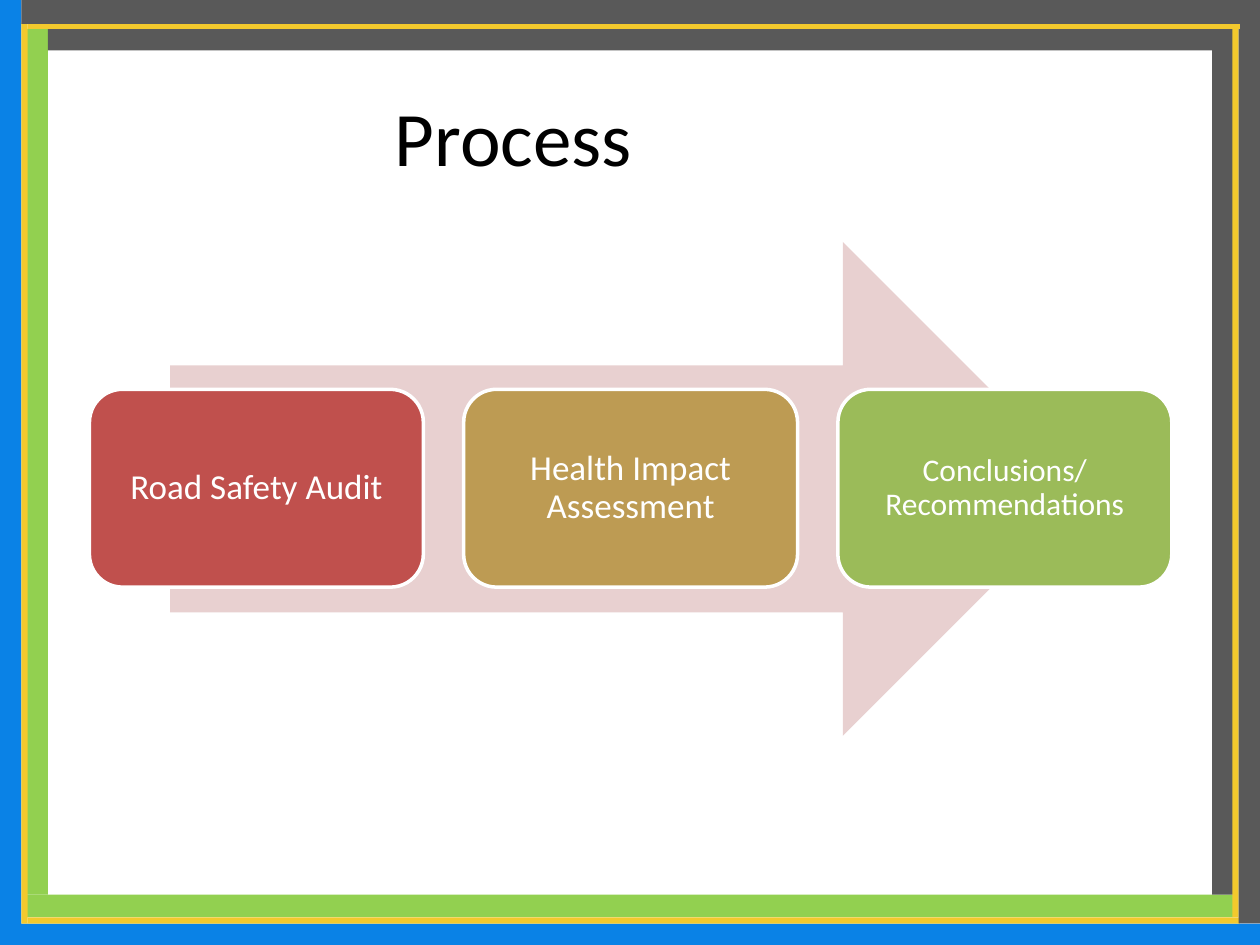
import pptx
import pptx.dml.color
import pptx.enum.shapes
import pptx.enum.text
import pptx.util

Inches = pptx.util.Inches
Pt = pptx.util.Pt
SHAPE = pptx.enum.shapes.MSO_SHAPE


def rgb(value):
    return pptx.dml.color.RGBColor.from_string(value)


class Deck:
    font = "Calibri"
    blue, green, yellow, grey = "0A82E6", "92D050", "F3C92D", "595959"
    white, black = "FFFFFF", "000000"

    def __init__(self, width, height):
        self.prs = pptx.Presentation()
        self.prs.slide_width = Inches(width)
        self.prs.slide_height = Inches(height)
        self.s = self.prs.slides.add_slide(self.prs.slide_layouts[5])

    def shape(self, kind, box, fill):
        sp = self.s.shapes.add_shape(kind, *map(Inches, box))
        sp.shadow.inherit = False
        sp.fill.solid()
        sp.fill.fore_color.rgb = rgb(fill)
        sp.line.fill.background()
        return sp

    def text(self, sp, text, size, color):
        tf = sp.text_frame
        tf.text = text
        tf.word_wrap = True
        tf.vertical_anchor = pptx.enum.text.MSO_ANCHOR.MIDDLE
        p = tf.paragraphs[0]
        p.alignment = pptx.enum.text.PP_ALIGN.CENTER
        for r in p.runs:
            r.font.name = self.font
            r.font.size = Pt(size)
            r.font.color.rgb = rgb(color)
        return tf

    def title(self, text, box):
        sp = self.s.shapes.title
        sp.left, sp.top, sp.width, sp.height = map(Inches, box)
        self.text(sp, text, 44, self.black)

    def step(self, text, box, fill, size):
        sp = self.shape(SHAPE.ROUNDED_RECTANGLE, box, fill)
        sp.line.color.rgb = rgb(self.white)
        sp.line.width = Pt(2)
        tf = self.text(sp, text, size, self.white)
        tf.margin_left = tf.margin_right = Inches(0.15)
        tf.margin_top = tf.margin_bottom = Inches(0.15)
        tf.paragraphs[0].line_spacing = 0.9


def main():
    deck = Deck(10, 7.5)

    frame = [
        (deck.blue, (0, 0, 0.17, 7.5)),
        (deck.blue, (0.08, 7.33, 9.92, 0.17)),
        (deck.green, (0.21, 0.23, 0.17, 6.87)),
        (deck.green, (0.21, 7.1, 9.58, 0.18)),
        (deck.yellow, (0.17, 0.18, 0.05, 7.15)),
        (deck.yellow, (0.22, 7.28, 9.62, 0.05)),
        (deck.grey, (9.62, 0, 0.17, 7.1)),
        (deck.yellow, (9.78, 0.18, 0.05, 7.1)),
        (deck.grey, (9.83, 0, 0.17, 7.33)),
        (deck.grey, (0.38, 0.23, 9.24, 0.17)),
        (deck.yellow, (0.22, 0.18, 9.62, 0.05)),
        (deck.grey, (0.17, 0, 9.67, 0.19)),
    ]
    for fill, box in frame:
        deck.shape(SHAPE.RECTANGLE, box, fill)

    deck.title("Process", (1.48, 0.4, 5.19, 1.35))
    deck.shape(SHAPE.RIGHT_ARROW, (1.35, 1.92, 7.3, 3.92), "E8D0D0")

    steps = [
        ("Road Safety Audit", "C0504D", 20),
        ("Health Impact Assessment", "BD9B53", 20),
        ("Conclusions/Recommendations", "9BBB59", 18),
    ]
    for i, (text, fill, size) in enumerate(steps):
        deck.step(text, (0.71 + 2.97 * i, 3.09, 2.65, 1.57), fill, size)

    deck.prs.save("out.pptx")


if __name__ == "__main__":
    main()
